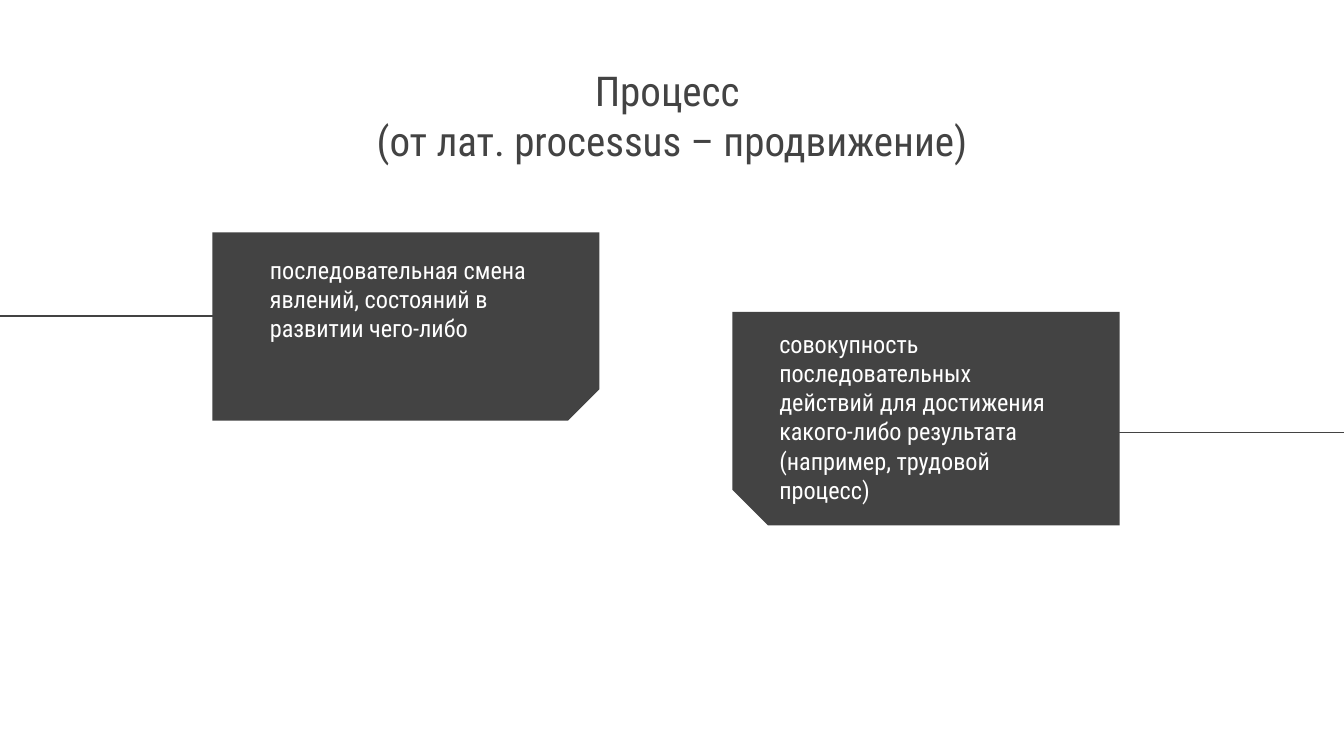
from lxml.etree import SubElement
from pptx import Presentation
from pptx.dml.color import RGBColor
from pptx.enum.shapes import MSO_CONNECTOR, MSO_SHAPE
from pptx.enum.text import MSO_ANCHOR, PP_ALIGN
from pptx.oxml.ns import qn
from pptx.util import Inches, Pt

COLORS = {"background": "FFFFFF", "dark": "434343", "light": "FFFFFF"}
FONT = "Roboto Condensed"
SLIDE_WIDTH = 10
SLIDE_HEIGHT = SLIDE_WIDTH * 9 / 16


def write_text(shape, text, size=13, color="light", align=PP_ALIGN.LEFT):
    """Fill a shape with one formatted paragraph."""
    frame = shape.text_frame
    frame.word_wrap = True
    frame.vertical_anchor = MSO_ANCHOR.TOP
    frame.margin_left = frame.margin_right = Inches(0.1)
    frame.margin_top = frame.margin_bottom = Inches(0.1)
    paragraph = frame.paragraphs[0]
    paragraph.text = text
    paragraph.alignment = align
    paragraph.line_spacing = 1.0
    paragraph.space_before = Pt(0)
    for run in paragraph.runs:
        run.font.name = FONT
        run.font.size = Pt(size)
        run.font.color.rgb = RGBColor.from_string(COLORS[color])


class SlideBuilder:
    """Draws the elements of one slide in a shared style."""

    def __init__(self, slide):
        """Keep the slide and set its background."""
        self.slide = slide
        self.dark = RGBColor.from_string(COLORS["dark"])
        fill = slide.background.fill
        fill.solid()
        fill.fore_color.rgb = RGBColor.from_string(COLORS["background"])

    def title(self, text, left, top, width, height):
        """Place and format the title placeholder."""
        title = self.slide.shapes.title
        title.left, title.top = Inches(left), Inches(top)
        title.width, title.height = Inches(width), Inches(height)
        write_text(title, text, size=22, color="dark", align=PP_ALIGN.CENTER)

    def card(self, left, top, width, height, rotation):
        """Draw a dark card with one cut corner."""
        card = self.slide.shapes.add_shape(
            MSO_SHAPE.SNIP_1_RECTANGLE,
            Inches(left), Inches(top), Inches(width), Inches(height))
        card.rotation = rotation
        card.adjustments[0] = 0.167
        card.shadow.inherit = False
        card.fill.solid()
        card.fill.fore_color.rgb = self.dark
        card.line.fill.background()

    def line(self, start_x, end_x, y):
        """Draw a thin horizontal line."""
        line = self.slide.shapes.add_connector(
            MSO_CONNECTOR.STRAIGHT, Inches(start_x), Inches(y), Inches(end_x), Inches(y))
        line.line.color.rgb = self.dark
        line.line.width = Pt(0.75)
        SubElement(line.element.spPr, qn("a:effectLst"))

    def definition(self, text, left, top):
        """Add the text of a card."""
        box = self.slide.shapes.add_textbox(
            Inches(left), Inches(top), Inches(2.36), Inches(1.1))
        write_text(box, text)


def main():
    """Build and save the presentation."""
    presentation = Presentation()
    presentation.slide_width = Inches(SLIDE_WIDTH)
    presentation.slide_height = Inches(SLIDE_HEIGHT)
    builder = SlideBuilder(presentation.slides.add_slide(presentation.slide_layouts[5]))
    builder.title("Процесс \v(от лат. processus – продвижение)", 2.15, 0.39, 5.7, 1.03)

    builder.card(2.32, 0.99, 1.4, 2.88, rotation=90)
    builder.line(2.65, 0, 2.35)
    builder.definition("последовательная смена явлений, состояний в развитии чего-либо",
                       1.91, 1.8)

    builder.card(5.45, 2.32, 2.88, 1.59, rotation=180)
    builder.line(SLIDE_WIDTH, 7.31, 3.22)
    builder.definition("совокупность последовательных действий для достижения "
                       "какого-либо результата (например, трудовой процесс)", 5.7, 2.35)

    presentation.save("out.pptx")


if __name__ == "__main__":
    main()
